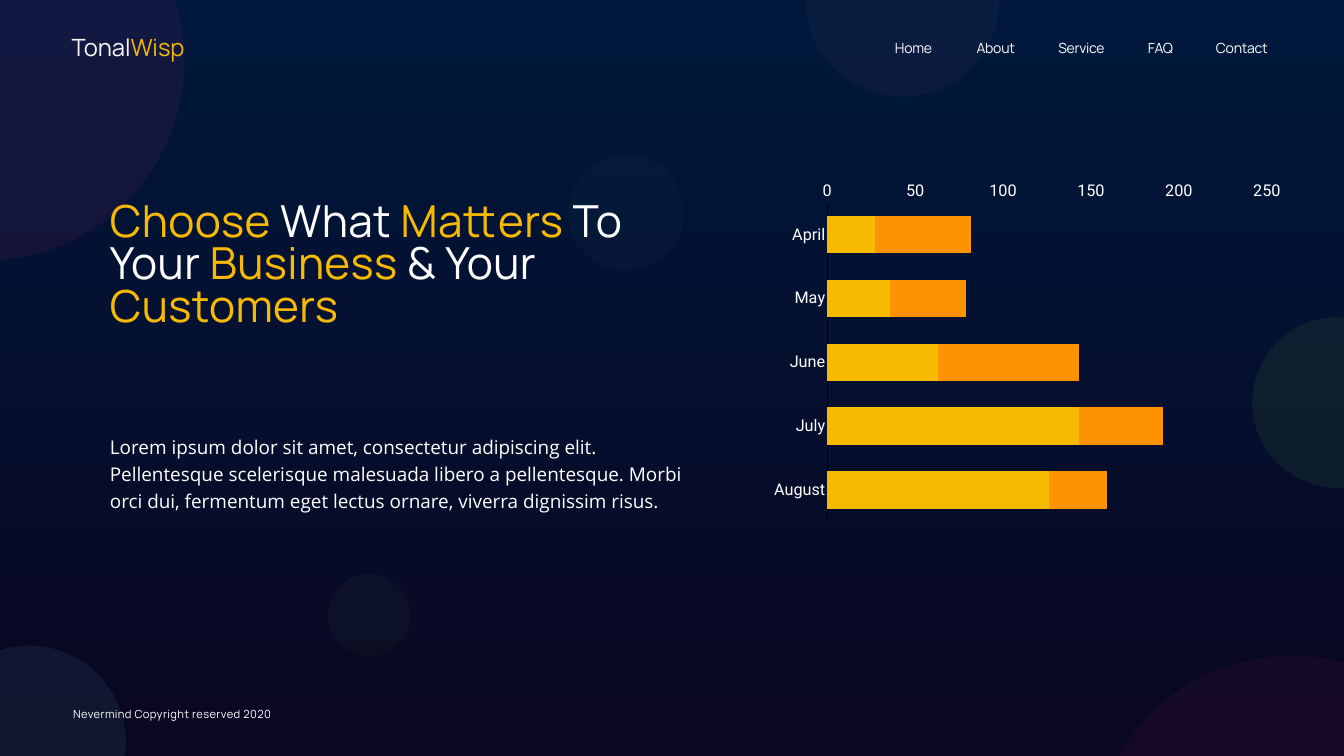
from lxml import etree
from pptx import Presentation
from pptx import util as u
from pptx.chart.data import CategoryChartData
from pptx.dml.color import RGBColor
from pptx.enum import chart as charts, shapes, text
from pptx.oxml import ns

PX = 9144
WHITE = RGBColor(0xFF, 0xFF, 0xFF)
BLACK = RGBColor(0, 0, 0)
GOLD = RGBColor(0xF7, 0xBA, 0x01)
ORANGE = RGBColor(0xFE, 0x93, 0x01)
NIGHT = RGBColor(0x09, 0x07, 0x21)
NAVY = RGBColor(0x00, 0x18, 0x3C)
PINK = RGBColor(0xCB, 0x2A, 0x7A)
GREEN = RGBColor(0x89, 0xFA, 0x4E)
AQUA = RGBColor(0x72, 0xFD, 0xEA)
CORAL = RGBColor(0xFF, 0x96, 0x8D)


class Page:
    """Draws styled elements on one slide, with lengths in px."""

    display, reading, figures = "Manrope", "Open Sans", "Roboto"

    def __init__(self, slide):
        self.slide = slide

    def box(self, *lengths):
        return [u.Emu(length * PX) for length in lengths]

    def background(self, bottom, top):
        fill = self.slide.background.fill
        fill.gradient()
        fill.gradient_angle = 90
        for stop, color in zip(fill.gradient_stops, (bottom, top)):
            stop.color.rgb = color

    def bubble(self, left, top, size, color, percent):
        circle = self.slide.shapes.add_shape(
            shapes.MSO_SHAPE.OVAL, *self.box(left, top, size, size))
        circle.shadow.inherit = False
        circle.line.fill.background()
        circle.fill.solid()
        circle.fill.fore_color.rgb = color
        rgb = circle._element.spPr.find(".//" + ns.qn("a:srgbClr"))
        etree.SubElement(rgb, ns.qn("a:alpha")).set("val", str(percent * 1000))

    def add_runs(self, shape, runs, size, font, inset, line=1.0, spacing=0,
                 anchor=text.MSO_ANCHOR.TOP):
        frame = shape.text_frame
        frame.margin_left = frame.margin_right = u.Emu(inset * PX)
        frame.margin_top = frame.margin_bottom = u.Emu(inset * PX)
        frame.vertical_anchor = anchor
        paragraph = frame.paragraphs[0]
        paragraph.alignment = text.PP_ALIGN.LEFT
        paragraph.line_spacing = line
        paragraph.space_before = u.Pt(0)
        for words, color in runs:
            run = paragraph.add_run()
            run.text = words
            run.font.size = u.Pt(size)
            run.font.name = font
            run.font.color.rgb = color
            run._r.get_or_add_rPr().set("spc", str(spacing))

    def label(self, place, runs, size, **style):
        shape = self.slide.shapes.add_textbox(*self.box(*place))
        shape.text_frame.word_wrap = False
        shape.text_frame.auto_size = text.MSO_AUTO_SIZE.SHAPE_TO_FIT_TEXT
        self.add_runs(shape, runs, size, self.display, 6, **style)

    def placeholder(self, index, place, runs, size, font, **style):
        shape = self.slide.placeholders[index]
        shape.left, shape.top, shape.width, shape.height = self.box(*place)
        shape.text_frame.word_wrap = True
        shape.text_frame.auto_size = text.MSO_AUTO_SIZE.NONE
        properties = shape.text_frame.paragraphs[0]._p.get_or_add_pPr()
        properties.set("marL", "0")
        properties.set("indent", "0")
        etree.SubElement(properties, ns.qn("a:buNone"))
        self.add_runs(shape, runs, size, font, 5, **style)

    def stacked_bars(self, place, months, series, plot_area):
        data = CategoryChartData()
        data.categories = months
        for name, values, _ in series:
            data.add_series(name, values)
        chart = self.slide.shapes.add_chart(
            charts.XL_CHART_TYPE.BAR_STACKED, *self.box(*place), data).chart
        chart.has_legend = chart.has_title = False
        chart.font.name = self.figures
        plot = chart.plots[0]
        plot.gap_width, plot.overlap, plot.vary_by_categories = 70, 100, False
        for bars, (_, _, color) in zip(plot.series, series):
            bars.format.fill.solid()
            bars.format.fill.fore_color.rgb = color
        for axis in (chart.category_axis, chart.value_axis):
            axis.has_major_gridlines = False
            axis.major_tick_mark = axis.minor_tick_mark = charts.XL_TICK_MARK.NONE
            font = axis.tick_labels.font
            font.size, font.name, font.color.rgb = u.Pt(23.3), self.figures, WHITE
        chart.category_axis.reverse_order = True
        chart.category_axis.crosses = charts.XL_AXIS_CROSSES.MAXIMUM
        chart.category_axis.format.line.color.rgb = BLACK
        chart.category_axis.format.line.width = u.Pt(1)
        values = chart.value_axis
        values.minimum_scale, values.maximum_scale, values.major_unit = 0, 250, 50
        values.format.line.fill.background()
        self.place_plot(chart, plot_area)

    def place_plot(self, chart, plot_area):
        area = chart._chartSpace.chart.plotArea
        for old in area.findall(ns.qn("c:layout")):
            area.remove(old)
        layout = etree.Element(ns.qn("c:layout"))
        area.insert(0, layout)
        manual = etree.SubElement(layout, ns.qn("c:manualLayout"))
        settings = [("layoutTarget", "inner"), ("xMode", "edge"), ("yMode", "edge")]
        for tag, value in settings + list(zip("xywh", plot_area)):
            etree.SubElement(manual, ns.qn("c:" + tag)).set("val", str(value))


def main():
    deck = Presentation()
    deck.slide_width, deck.slide_height = u.Emu(2667 * PX), u.Emu(1500 * PX)
    page = Page(deck.slides.add_slide(deck.slide_layouts[1]))
    page.background(NIGHT, NAVY)

    corner_pink = (2167, 1301, 791, PINK)
    edge_green = (2485, 629, 339, GREEN)
    corner_aqua = (-134, 1281, 384, AQUA)
    top_pink = (-425, -274, 791, PINK)
    back = [(corner_pink, 3), (edge_green, 3), ((1127, 307, 230, AQUA), 2),
            (corner_aqua, 3), ((650, 1139, 164, GREEN), 3), (top_pink, 5)]
    front = [corner_pink, edge_green, corner_aqua, top_pink, (1599, -192, 384, CORAL)]
    for bubble, percent in back:
        page.bubble(*bubble, percent)

    page.label((139, 1397, 438, 44), [("Nevermind Copyright reserved 2020", WHITE)], 16, spacing=60)
    headline = [("Choose", GOLD), (" What ", WHITE), ("Matters", GOLD), (" To Your ", WHITE),
                ("Business", GOLD), (" & Your ", WHITE), ("Customers", GOLD)]
    page.placeholder(0, (213, 399, 1144, 344), headline, 63, page.display, line=0.8, spacing=60)
    menu = [("Home", 1770, 93), ("About", 1932, 93), ("Service", 2094, 109),
            ("FAQ", 2272, 65), ("Contact", 2407, 121)]
    for entry, left, width in menu:
        page.label((left, 72, width, 50), [(entry, WHITE)], 20, spacing=-40)
    page.label((136, 61, 259, 77), [("Tonal", WHITE), ("Wisp", GOLD)], 34,
               line=0.7, anchor=text.MSO_ANCHOR.MIDDLE)
    summary = ("Lorem ipsum dolor sit amet, consectetur adipiscing elit. "
               "Pellentesque scelerisque malesuada libero a pellentesque. "
               "Morbi orci dui, fermentum eget lectus ornare, viverra dignissim risus.")
    page.placeholder(1, (213, 850, 1156, 252), [(summary, WHITE)], 27, page.reading, line=1.2)
    page.stacked_bars(
        (1508, 360, 1033, 742), ["April", "May", "June", "July", "August"],
        [("Series 1", (27, 36, 63, 143, 126), GOLD), ("Series 2", (55, 43, 80, 48, 33), ORANGE)],
        (0.13, 0.05, 0.85, 0.86))

    for bubble in front:
        page.bubble(*bubble, 4)
    deck.save("out.pptx")


if __name__ == "__main__":
    main()
